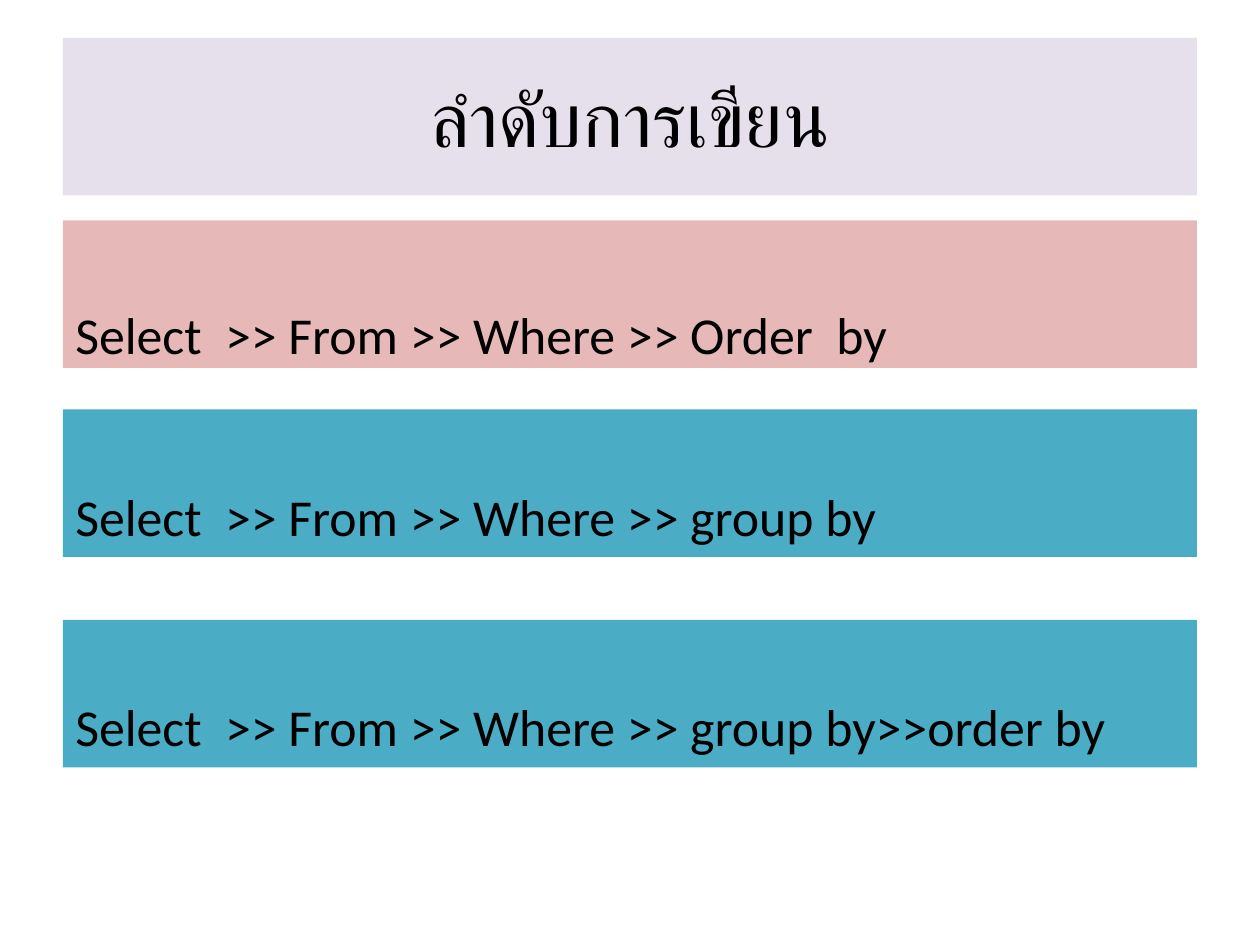
from pptx import Presentation
from pptx.dml.color import RGBColor
from pptx.enum.shapes import MSO_SHAPE
from pptx.enum.text import MSO_ANCHOR, PP_ALIGN
from pptx.util import Inches, Pt

LAVENDER = RGBColor(0xE6, 0xE0, 0xEC)
PINK = RGBColor(0xE6, 0xB9, 0xB8)
TEAL = RGBColor(0x4B, 0xAC, 0xC6)
BLACK = RGBColor(0, 0, 0)

TITLE = "ลำดับการเขียน"
CLAUSES = [
    ("Select  >> From >> Where >> Order  by", 1.75, PINK, 1.0),
    ("Select  >> From >> Where >> group by", 3.25, TEAL, 0.9),
    ("Select  >> From >> Where >> group by>>order by", 4.92, TEAL, 0.9),
]
LEFT, WIDTH = 0.5, 9
TITLE_TOP, TITLE_HEIGHT = 0.3, 1.25
CLAUSE_HEIGHT, CLAUSE_INSET = 1.17, 0.65


def add_band(s, text, *, top, height, fill, size, align=PP_ALIGN.LEFT,
             anchor=MSO_ANCHOR.TOP, inset=0.05, bottom=0.05, spacing=1.0):
    sp = s.shapes.add_shape(MSO_SHAPE.RECTANGLE, Inches(LEFT), Inches(top),
                            Inches(WIDTH), Inches(height))
    sp.shadow.inherit = False
    sp.fill.solid()
    sp.fill.fore_color.rgb = fill
    sp.line.fill.background()
    tf = sp.text_frame
    tf.word_wrap = True
    tf.vertical_anchor = anchor
    tf.margin_top, tf.margin_bottom = Inches(inset), Inches(bottom)
    p = tf.paragraphs[0]
    p.alignment = align
    p.line_spacing = spacing
    r = p.add_run()
    r.text = text
    r.font.name = "Calibri"
    r.font.size = Pt(size)
    r.font.color.rgb = BLACK


prs = Presentation()
prs.slide_width, prs.slide_height = Inches(10), Inches(7.5)
s = prs.slides.add_slide(prs.slide_layouts[6])

add_band(s, TITLE, top=TITLE_TOP, height=TITLE_HEIGHT, fill=LAVENDER, size=44,
         align=PP_ALIGN.CENTER, anchor=MSO_ANCHOR.MIDDLE)
for text, top, fill, spacing in CLAUSES:
    add_band(s, text, top=top, height=CLAUSE_HEIGHT, fill=fill, size=29.6,
             inset=CLAUSE_INSET, bottom=0, spacing=spacing)

prs.save("out.pptx")
